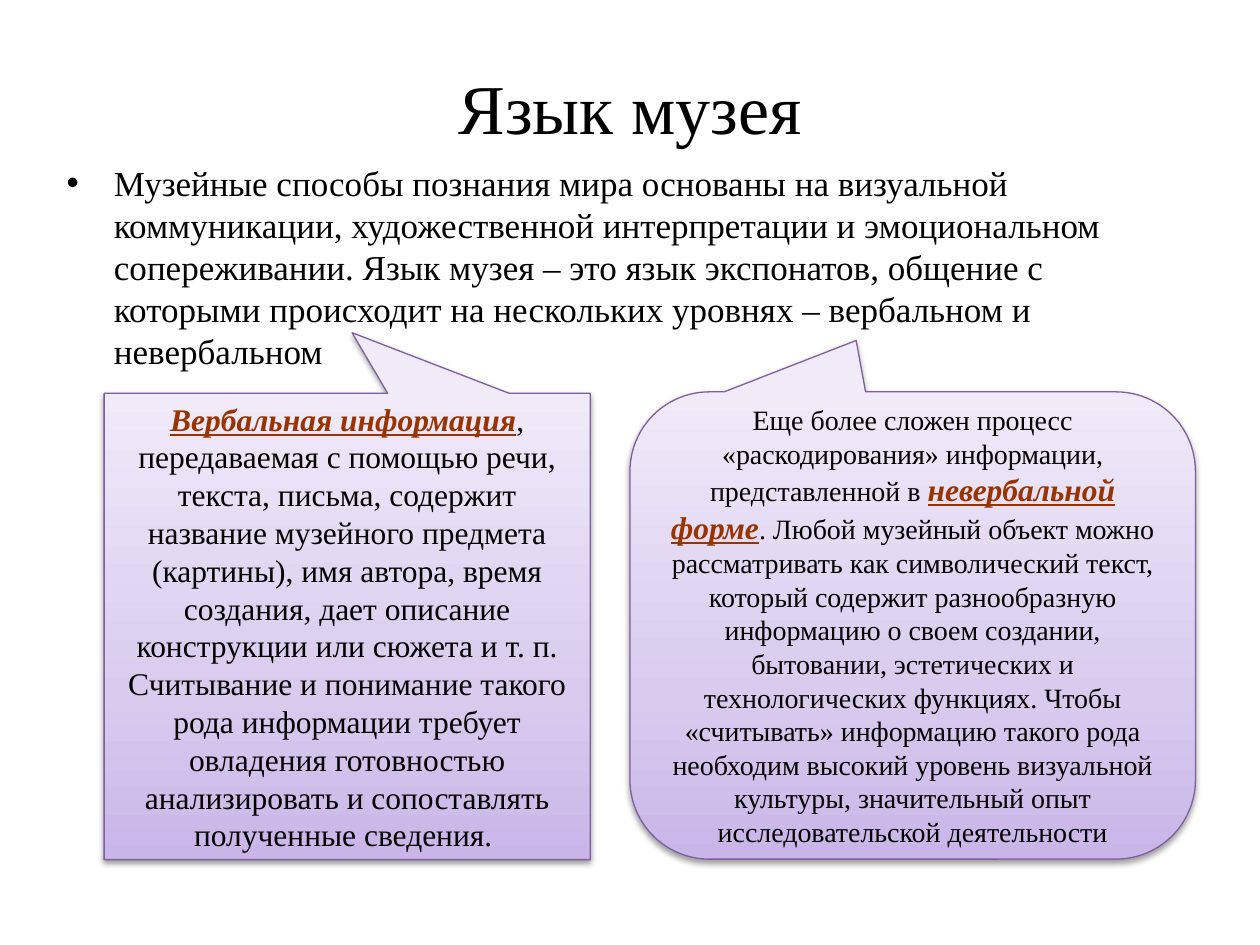
from lxml import etree
from pptx import Presentation
from pptx.dml.color import RGBColor
from pptx.enum.shapes import MSO_SHAPE as Shape
from pptx.enum.text import MSO_ANCHOR as Anchor, MSO_AUTO_SIZE as AutoSize, PP_ALIGN as Align
from pptx.oxml import parse_xml
from pptx.oxml.ns import nsdecls, qn
from pptx.util import Cm, Pt

FONT = "Times New Roman"
BLACK = RGBColor(0x00, 0x00, 0x00)
RUST = RGBColor(0x99, 0x33, 0x00)
VIOLET = RGBColor(0x7D, 0x60, 0xA0)
LILAC_STOPS = [
    (0, RGBColor(0xC9, 0xB5, 0xE8)),
    (35, RGBColor(0xD8, 0xCB, 0xEE)),
    (100, RGBColor(0xF0, 0xEA, 0xF9)),
]


def place(part, box):
    part.left, part.top, part.width, part.height = (Cm(length) for length in box)


def add_run(paragraph, wording, size, key_term=False):
    run = paragraph.add_run()
    run.text = wording
    font = run.font
    font.name, font.size = FONT, Pt(size)
    font.color.rgb = RUST if key_term else BLACK
    if key_term:
        font.bold = font.italic = font.underline = True


def fill_placeholder(placeholder, box, wording, size, anchor, align):
    place(placeholder, box)
    frame = placeholder.text_frame
    frame.word_wrap = True
    frame.auto_size = AutoSize.NONE
    frame.vertical_anchor = anchor
    paragraph = frame.paragraphs[0]
    paragraph.alignment = align
    paragraph.space_before = Pt(0)
    add_run(paragraph, wording, size)


def shade_lilac(callout):
    callout.fill.gradient()
    callout.fill.gradient_angle = 90
    properties = callout.element.spPr
    stops = properties.find(qn("a:gradFill")).find(qn("a:gsLst"))
    for stop in list(stops):
        stops.remove(stop)
    for position, color in LILAC_STOPS:
        stop = etree.SubElement(stops, qn("a:gs"), pos=str(position * 1000))
        etree.SubElement(stop, qn("a:srgbClr"), val=str(color))
    callout.line.color.rgb = VIOLET
    callout.line.width = Pt(0.75)
    properties.append(parse_xml(
        f'<a:effectLst {nsdecls("a")}>'
        '<a:outerShdw blurRad="40000" dist="20000" dir="5400000" rotWithShape="0">'
        '<a:srgbClr val="000000"><a:alpha val="38000"/></a:srgbClr>'
        '</a:outerShdw></a:effectLst>'
    ))


def add_callout(slide, box, outline, adjustments, passages):
    callout = slide.shapes.add_shape(outline, *(Cm(length) for length in box))
    for index, value in enumerate(adjustments):
        callout.adjustments[index] = value
    shade_lilac(callout)
    frame = callout.text_frame
    frame.word_wrap = True
    frame.vertical_anchor = Anchor.MIDDLE
    paragraph = frame.paragraphs[0]
    paragraph.alignment = Align.CENTER
    for passage in passages:
        add_run(paragraph, *passage)


def build_museum_slide(presentation):
    slide = presentation.slides.add_slide(presentation.slide_layouts[1])
    title, thesis = slide.placeholders
    fill_placeholder(title, (1.27, 0.76, 22.86, 2.77), "Язык музея", 40,
                     Anchor.MIDDLE, Align.CENTER)
    fill_placeholder(
        thesis, (1.09, 3.12, 22.81, 4.8),
        "Музейные способы познания мира основаны на визуальной коммуникации, "
        "художественной интерпретации и эмоциональном сопереживании. Язык музея – "
        "это язык экспонатов, общение с которыми происходит на нескольких уровнях – "
        "вербальном и невербальном",
        20, Anchor.TOP, Align.LEFT)
    add_callout(
        slide, (2.1, 7.93, 9.8, 9.4), Shape.RECTANGULAR_CALLOUT, (0.01, -0.63),
        [
            ("Вербальная информация", 18, True),
            (", передаваемая с помощью речи, текста, письма, содержит название "
             "музейного предмета (картины), имя автора, время создания, дает описание "
             "конструкции или сюжета и т. п. Считывание и понимание такого рода "
             "информации требует овладения готовностью анализировать и сопоставлять "
             "полученные сведения. ", 18),
        ])
    add_callout(
        slide, (12.7, 7.9, 11.4, 9.42), Shape.ROUNDED_RECTANGULAR_CALLOUT,
        (-0.1, -0.61, 0.17),
        [
            ("Еще более сложен процесс «раскодирования» информации, "
             "представленной в ", 16),
            ("невербальной форме", 18, True),
            (". Любой музейный объект можно рассматривать как символический текст, "
             "который содержит разнообразную информацию о своем создании, бытовании, "
             "эстетических и технологических функциях. Чтобы «считывать» информацию "
             "такого рода необходим высокий уровень визуальной культуры, значительный "
             "опыт исследовательской деятельности", 16),
        ])


def main():
    presentation = Presentation()
    presentation.slide_width, presentation.slide_height = Cm(25.4), Cm(19.05)
    build_museum_slide(presentation)
    presentation.save("out.pptx")


if __name__ == "__main__":
    main()
